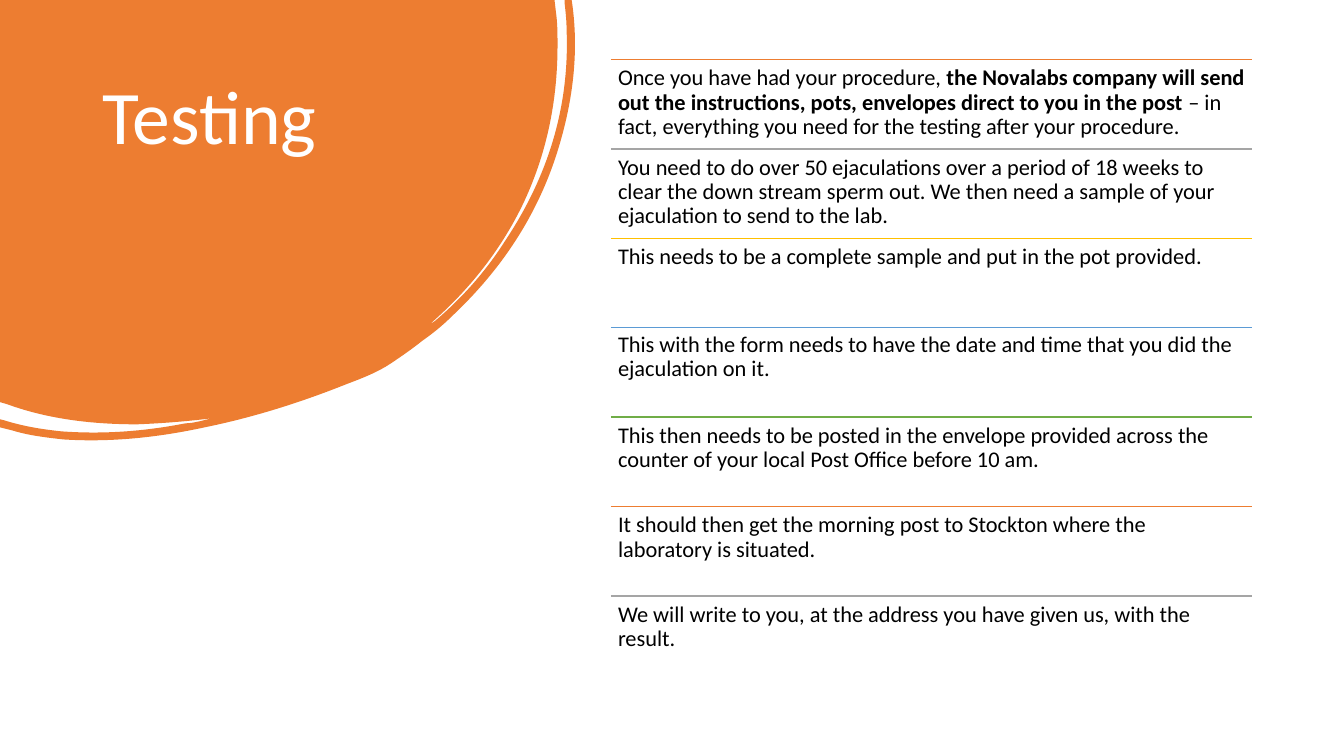
from dataclasses import dataclass

from lxml.etree import SubElement
from pptx import Presentation
from pptx.dml.color import RGBColor
from pptx.enum.shapes import MSO_CONNECTOR
from pptx.enum.text import MSO_ANCHOR
from pptx.oxml.ns import qn
from pptx.slide import Slide
from pptx.util import Inches, Pt

FONT = "Calibri"
ORANGE, GRAY, GOLD, BLUE, GREEN = "ED7D31", "A5A5A5", "FFC000", "5B9BD5", "70AD47"
WHITE, BLACK = "FFFFFF", "000000"

STEPS_LEFT, STEPS_TOP = 6.06, 0.59
STEPS_WIDTH, STEPS_HEIGHT = 6.36, 6.21

# Two numbers are a straight line to a point, six are a Bézier curve.
BLOB_WIDTH, BLOB_HEIGHT = 5.71, 4.37
BLOB_OUTLINE = [
    (5.5, 0), (5.52, 0.17),
    (5.53, 0.26, 5.53, 0.36, 5.53, 0.45),
    (5.53, 1.01, 5.42, 1.54, 5.18, 2.04),
    (4.96, 2.49, 4.65, 2.88, 4.27, 3.21),
    (4.29, 3.21, 4.3, 3.19, 4.32, 3.18),
    (4.59, 2.95, 4.82, 2.69, 5.01, 2.39),
    (5.43, 1.76, 5.65, 1.07, 5.62, 0.3),
    (5.62, 0.21, 5.61, 0.12, 5.6, 0.03),
    (5.6, 0), (5.67, 0), (5.68, 0.07),
    (5.74, 0.54, 5.68, 1.02, 5.53, 1.5),
    (5.33, 2.14, 4.97, 2.68, 4.48, 3.14),
    (4.39, 3.23, 4.29, 3.31, 4.19, 3.38),
    (4.09, 3.46, 3.99, 3.53, 3.87, 3.61),
    (3.75, 3.69, 3.6, 3.75, 3.44, 3.81),
    (2.99, 3.99, 2.52, 4.14, 2.03, 4.24),
    (1.57, 4.34, 1.1, 4.39, 0.63, 4.36),
    (0.45, 4.34, 0.28, 4.32, 0.12, 4.27),
    (0, 4.24), (0, 4.16), (0.04, 4.17),
    (0.23, 4.23, 0.42, 4.26, 0.61, 4.28),
    (1.03, 4.31, 1.43, 4.28, 1.84, 4.2),
    (1.89, 4.2, 1.93, 4.19, 1.98, 4.18),
    (2.02, 4.17, 2.06, 4.16, 2.1, 4.15),
    (1.86, 4.18, 1.61, 4.2, 1.36, 4.21),
    (0.92, 4.21, 0.48, 4.16, 0.07, 4.01),
    (0, 3.99),
]


@dataclass
class Step:
    color: str
    text: str
    bold_text: str = ""
    ending: str = ""
    text_shift: float = 0


STEPS = [
    Step(ORANGE, "Once you have had your procedure, ",
         "the Novalabs company will send out the instructions, pots, "
         "envelopes direct to you in the post ",
         "– in fact, everything you need for the testing after your procedure."),
    Step(GRAY, "You need to do over 50 ejaculations over a period of 18 weeks to clear "
               "the down stream sperm out. We then need a sample of your ejaculation "
               "to send to the lab."),
    Step(GOLD, "This needs to be a complete sample and put in the pot provided."),
    Step(BLUE, "This with the form needs to have the date and time that you did the "
               "ejaculation on it.", text_shift=-0.02),
    Step(GREEN, "This then needs to be posted in the envelope provided across the counter "
                "of your local Post Office before 10 am."),
    Step(ORANGE, "It should then get the morning post to Stockton where the laboratory "
                 "is situated."),
    Step(GRAY, "We will write to you, at the address you have given us, with the result."),
]


def rgb(color: str) -> RGBColor:
    return RGBColor.from_string(color)


def add_blob(slide: Slide) -> None:
    """Build the outline from its corners, then bend the curved segments."""
    builder = slide.shapes.build_freeform(0, 0)
    builder.add_line_segments(
        [(Inches(segment[-2]), Inches(segment[-1])) for segment in BLOB_OUTLINE])
    blob = builder.convert_to_shape()
    blob.width, blob.height = Inches(BLOB_WIDTH), Inches(BLOB_HEIGHT)
    outline = next(blob._element.iter(qn("a:path")))
    outline.set("w", str(blob.width))
    outline.set("h", str(blob.height))
    for element, segment in zip(list(outline.iter(qn("a:lnTo"))), BLOB_OUTLINE):
        if len(segment) == 6:
            element.tag = qn("a:cubicBezTo")
            for index in (0, 1):
                x, y = segment[2 * index:2 * index + 2]
                control = SubElement(element, qn("a:pt"), x=str(Inches(x)), y=str(Inches(y)))
                element.insert(index, control)
    blob.shadow.inherit = False
    blob.fill.solid()
    blob.fill.fore_color.rgb = rgb(ORANGE)
    blob.line.fill.background()


def add_text(slide: Slide, *runs: str, left: float, top: float, width: float,
             height: float, size: float, color: str,
             inset_x: float = 0.1, inset_y: float = 0.05) -> None:
    """Add one paragraph in which every second run is bold."""
    box = slide.shapes.add_textbox(Inches(left), Inches(top), Inches(width), Inches(height))
    frame = box.text_frame
    frame.word_wrap = True
    frame.vertical_anchor = MSO_ANCHOR.TOP
    frame.margin_left = frame.margin_right = Inches(inset_x)
    frame.margin_top = frame.margin_bottom = Inches(inset_y)
    paragraph = frame.paragraphs[0]
    paragraph.line_spacing = 0.9
    for index, text in enumerate(runs):
        if not text:
            continue
        run = paragraph.add_run()
        run.text = text
        run.font.name = FONT
        run.font.size = Pt(size)
        run.font.bold = index % 2 == 1
        run.font.color.rgb = rgb(color)


def add_rule(slide: Slide, top: float, color: str) -> None:
    rule = slide.shapes.add_connector(
        MSO_CONNECTOR.STRAIGHT, Inches(STEPS_LEFT), Inches(top),
        Inches(STEPS_LEFT + STEPS_WIDTH), Inches(top))
    rule.line.color.rgb = rgb(color)
    rule.line.width = Pt(1)
    SubElement(rule._element.spPr, qn("a:effectLst"))


def add_step(slide: Slide, step: Step, top: float, height: float) -> None:
    add_rule(slide, top, step.color)
    add_text(slide, step.text, step.bold_text, step.ending,
             left=STEPS_LEFT, top=top + step.text_shift,
             width=STEPS_WIDTH, height=height,
             size=16, color=BLACK, inset_x=0.07, inset_y=0.07)


def main() -> None:
    presentation = Presentation()
    presentation.slide_width, presentation.slide_height = Inches(13.33), Inches(7.5)
    slide = presentation.slides.add_slide(presentation.slide_layouts[6])
    add_blob(slide)
    add_text(slide, "Testing", left=0.92, top=0.74, width=3.52, height=2.22,
             size=54, color=WHITE)
    step_height = STEPS_HEIGHT / len(STEPS)
    for index, step in enumerate(STEPS):
        add_step(slide, step, STEPS_TOP + index * step_height, step_height)
    presentation.save("out.pptx")


if __name__ == "__main__":
    main()
